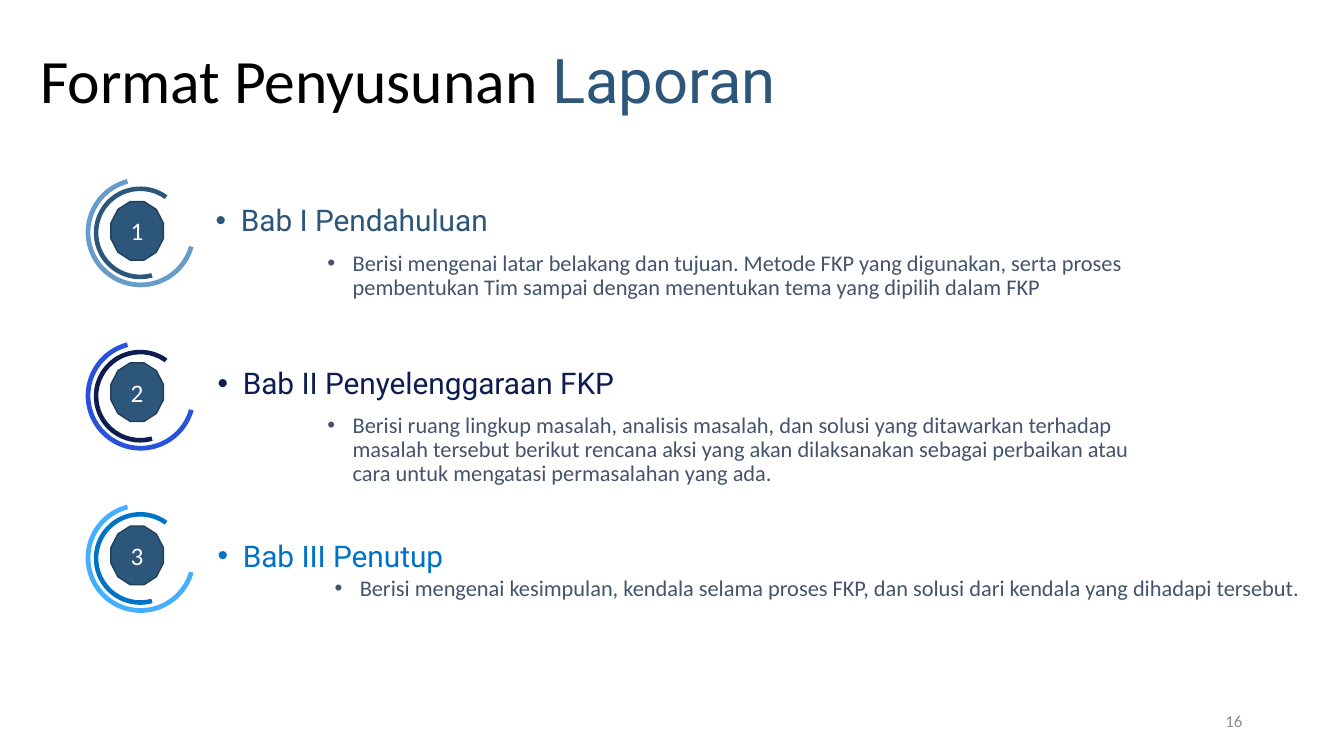
from pptx import Presentation
from pptx import util as u
from pptx.dml.color import RGBColor
from pptx.enum import shapes, text
from lxml import etree

PX = 9144  # 100 px to the inch
COLORS = {
    "black": "000000", "white": "FFFFFF", "gray": "8C8C8C", "slate": "44546A",
    "steel": "2C567A", "edge": "21405A", "mist": "679CC8",
    "navy": "0D1D51", "royal": "2852DC", "blue": "0072C7", "sky": "44AFFF",
}
# Ring top, ring colours, badge top, heading box and text, body box and text
CHAPTERS = [
    (176, "mist", "steel", 200, (204, 183, 542, 58), "Bab I Pendahuluan",
     (315, 245, 830, 93),
     "Berisi mengenai latar belakang dan tujuan. Metode FKP yang digunakan, "
     "serta proses pembentukan Tim sampai dengan menentukan tema yang dipilih "
     "dalam FKP"),
    (338, "royal", "navy", 360, (206, 360, 589, 43), "Bab II Penyelenggaraan FKP",
     (315, 406, 830, 93),
     "Berisi ruang lingkup masalah, analisis masalah, dan solusi yang ditawarkan "
     "terhadap masalah tersebut berikut rencana aksi yang akan dilaksanakan "
     "sebagai perbaikan atau cara untuk mengatasi permasalahan yang ada."),
    (499, "sky", "blue", 522, (206, 516, 542, 58), "Bab III Penutup",
     (322, 568, 1016, 93),
     "Berisi mengenai kesimpulan, kendala selama proses FKP, dan solusi dari "
     "kendala yang dihadapi tersebut."),
]


def color(name):
    return RGBColor.from_string(COLORS[name])


def scale(box):
    return [n * PX for n in box]


def style(run, size, font, tint):
    run.font.size = u.Pt(size)
    run.font.name = font
    run.font.color.rgb = color(tint)


def write(slide, box, parts, size, anchor, align=text.PP_ALIGN.LEFT):
    """Add a one-paragraph text box; parts are (words, font, colour)."""
    frame = slide.shapes.add_textbox(*scale(box)).text_frame
    frame.word_wrap = True
    frame.vertical_anchor = anchor
    para = frame.paragraphs[0]
    para.alignment = align
    for words, font, tint in parts:
        run = para.add_run()
        run.text = words
        style(run, size, font, tint)
    return para


def bullet(para):
    para.line_spacing = 0.9
    para.space_before = u.Pt(10)
    props = para._p.get_or_add_pPr()
    props.set("marL", str(25 * PX))
    props.set("indent", str(-25 * PX))
    space = props.nsmap["a"]
    font = etree.SubElement(props, f"{{{space}}}buFont")
    font.set("typeface", "Arial")
    mark = etree.SubElement(props, f"{{{space}}}buChar")
    mark.set("char", "•")


def solid(slide, kind, box, tint):
    shape = slide.shapes.add_shape(kind, *scale(box))
    shape.shadow.inherit = False
    shape.fill.solid()
    shape.fill.fore_color.rgb = color(tint)
    shape.line.fill.background()
    return shape


def ring(slide, box, turn, bends, tint):
    arc = solid(slide, shapes.MSO_SHAPE.BLOCK_ARC, box, tint)
    arc.rotation = turn
    for i, bend in enumerate(bends):
        arc.adjustments[i] = bend


def badge(slide, box, label):
    shape = solid(slide, shapes.MSO_SHAPE.DODECAGON, box, "steel")
    shape.line.color.rgb = color("edge")
    shape.line.width = u.Pt(1)
    frame = shape.text_frame
    frame.text = label
    frame.vertical_anchor = text.MSO_ANCHOR.MIDDLE
    para = frame.paragraphs[0]
    para.alignment = text.PP_ALIGN.CENTER
    style(para.runs[0], 18, "Calibri", "white")


def chapter(slide, num, top, outer, inner, mid, head, title, body, words):
    ring(slide, (85, top, 109, 109), 60, (189.41, 117.33, 0.043), outer)
    ring(slide, (93, top + 9, 92, 92), 110.3, (194.52, 117.42, 0.049), inner)
    badge(slide, (110, mid, 52, 58), str(num))
    bullet(write(slide, head, [(title, "Roboto", inner)], 21.3,
                 text.MSO_ANCHOR.BOTTOM))
    bullet(write(slide, body, [(words, "Calibri", "slate")], 16,
                 text.MSO_ANCHOR.TOP))


def main():
    deck = Presentation()
    deck.slide_width, deck.slide_height = scale((1333, 750))
    slide = deck.slides.add_slide(deck.slide_layouts[6])
    title = write(slide, (30, 10, 1150, 145),
                  [("Format Penyusunan ", "Calibri", "black"),
                   ("Laporan", "Roboto", "steel")], 44, text.MSO_ANCHOR.MIDDLE)
    title.line_spacing = 0.9
    for num, parts in enumerate(CHAPTERS, 1):
        chapter(slide, num, *parts)
    write(slide, (942, 695, 300, 40), [("16", "Calibri", "gray")], 12,
          text.MSO_ANCHOR.MIDDLE, text.PP_ALIGN.RIGHT)
    deck.save("out.pptx")


if __name__ == "__main__":
    main()
